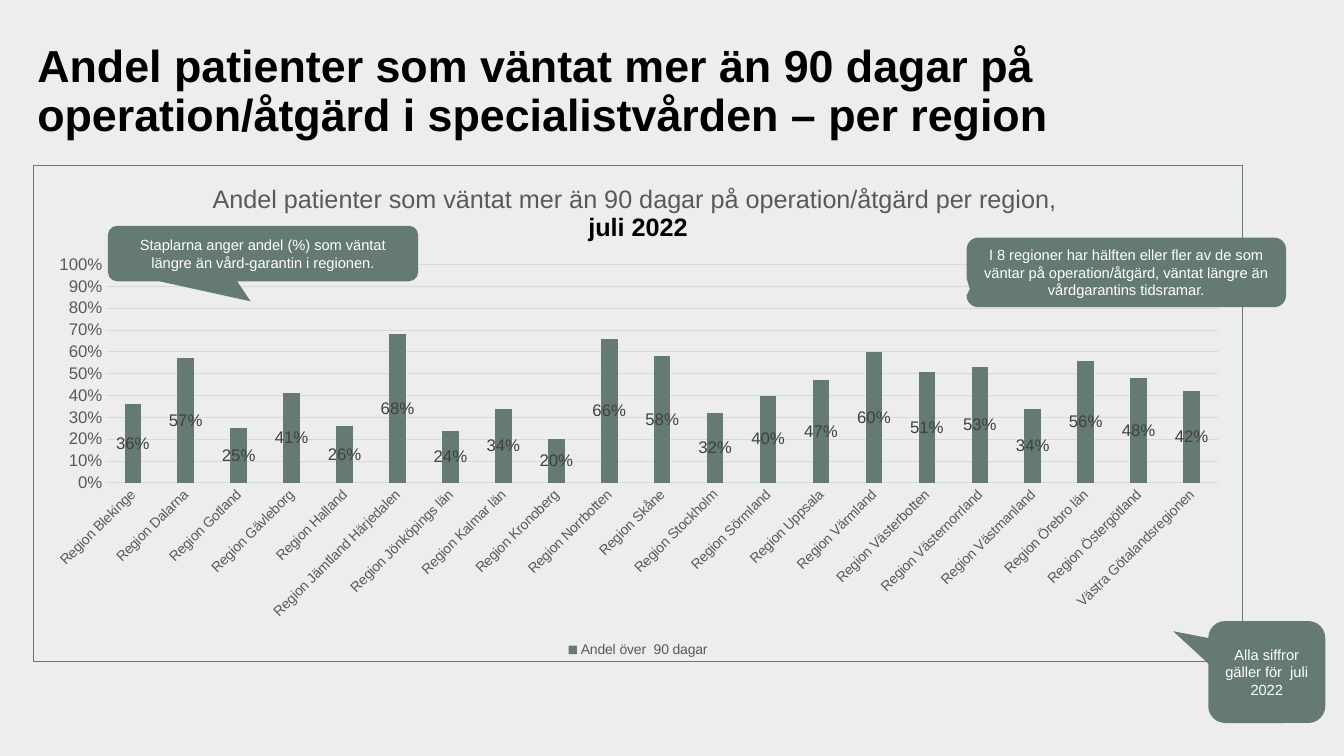
from lxml import etree
from pptx import Presentation
from pptx.chart.data import CategoryChartData
from pptx.dml.color import RGBColor
from pptx.enum import chart as kinds, shapes, text
from pptx.oxml import parse_xml
from pptx.oxml.ns import nsdecls, qn
from pptx.util import Cm, Pt

# Content
FONT = "Arial"
GREEN, GREY, PALE = "657B71", "595959", "D9D9D9"
HEADING = ("Andel patienter som väntat mer än 90 dagar på "
           "operation/åtgärd i specialistvården – per region")
CHART_TITLE = [
    ("Andel patienter som väntat mer än 90 dagar på operation/åtgärd per region, ", GREY, False),
    ("juli 2022", "000000", True),
]
SERIES = "Andel över  90 dagar"
SHARES = {
    "Region Blekinge": 0.36, "Region Dalarna": 0.57, "Region Gotland": 0.25,
    "Region Gävleborg": 0.41, "Region Halland": 0.26,
    "Region Jämtland Härjedalen": 0.68, "Region Jönköpings län": 0.24,
    "Region Kalmar län": 0.34, "Region Kronoberg": 0.2, "Region Norrbotten": 0.66,
    "Region Skåne": 0.58, "Region Stockholm": 0.32, "Region Sörmland": 0.4,
    "Region Uppsala": 0.47, "Region Värmland": 0.6, "Region Västerbotten": 0.51,
    "Region Västernorrland": 0.53, "Region Västmanland": 0.34,
    "Region Örebro län": 0.56, "Region Östergötland": 0.48,
    "Västra Götalandsregionen": 0.42,
}
# Callouts: text, (left, top, width, height) in cm, pointer tip
CALLOUTS = [
    ("Alla siffror gäller för  juli 2022",
     (30.45, 15.65, 2.95, 2.57), (-0.8, -0.4)),
    ("I 8 regioner har hälften eller fler av de som väntar på operation/åtgärd, "
     "väntat längre än vårdgarantins tidsramar.",
     (24.36, 5.99, 8.05, 1.75), (-0.49, 0.24)),
    ("Staplarna anger andel (%) som väntat längre än vård-garantin i regionen.",
     (2.72, 5.69, 7.82, 1.4), (-0.04, 0.86)),
]
PLOT = {"x": 0.06, "y": 0.2, "w": 0.92, "h": 0.44}  # fractions of the chart


def rgb(value):
    return RGBColor.from_string(value)


def style(font, size, color, bold=False):
    font.name, font.size, font.bold = FONT, Pt(size), bold
    font.color.rgb = rgb(color)


def draw_line(line, color):
    line.color.rgb = rgb(color)
    line.width = Pt(0.75)


deck = Presentation()
deck.slide_width, deck.slide_height = Cm(33.87), Cm(19.05)
page = deck.slides.add_slide(deck.slide_layouts[6])
page.background.fill.solid()
page.background.fill.fore_color.rgb = rgb("EDEDED")

# Chart
data = CategoryChartData(number_format="0%")
data.categories = list(SHARES)
data.add_series(SERIES, list(SHARES.values()))
chart = page.shapes.add_chart(kinds.XL_CHART_TYPE.COLUMN_CLUSTERED, Cm(0.84), Cm(4.15),
                              Cm(30.48), Cm(12.54), data).chart
style(chart.font, 12, "000000")

title_frame = chart.chart_title.text_frame
for number, (words, color, bold) in enumerate(CHART_TITLE):
    para = title_frame.add_paragraph() if number else title_frame.paragraphs[0]
    para.text = words
    style(para.font, 18, color, bold)

chart.has_legend = True
chart.legend.position = kinds.XL_LEGEND_POSITION.BOTTOM
chart.legend.include_in_layout = False
style(chart.legend.font, 10, GREY)

# Axes
regions, percent = chart.category_axis, chart.value_axis
for axis, size in ((regions, 10), (percent, 12)):
    axis.major_tick_mark = axis.minor_tick_mark = kinds.XL_TICK_MARK.NONE
    style(axis.tick_labels.font, size, GREY)
draw_line(regions.format.line, PALE)
label_body = regions._element.find(qn("c:txPr")).find(qn("a:bodyPr"))
label_body.set("rot", "-2700000")
label_body.set("vert", "horz")
percent.minimum_scale, percent.maximum_scale, percent.major_unit = 0, 1, 0.1
percent.tick_labels.number_format = "0%"
percent.tick_labels.number_format_is_linked = False
percent.format.line.fill.background()
draw_line(percent.major_gridlines.format.line, PALE)

# Columns and their labels
columns = chart.plots[0]
columns.gap_width, columns.overlap, columns.vary_by_categories = 219, -27, False
series = columns.series[0]
series.format.fill.solid()
series.format.fill.fore_color.rgb = rgb(GREEN)
labels = series.data_labels
labels.show_value = True
labels.number_format, labels.number_format_is_linked = "0%", False
labels.position = kinds.XL_LABEL_POSITION.CENTER
style(labels.font, 12, "404040")

# Plot position and chart border
plot_area = chart._chartSpace.chart.plotArea
for old_layout in plot_area.findall(qn("c:layout")):
    plot_area.remove(old_layout)
layout = etree.Element(qn("c:layout"))
manual = etree.SubElement(layout, qn("c:manualLayout"))
settings = [("layoutTarget", "inner"), ("xMode", "edge"), ("yMode", "edge"), *PLOT.items()]
for tag, value in settings:
    etree.SubElement(manual, qn("c:" + tag)).set("val", str(value))
plot_area.insert(0, layout)
chart._chartSpace.chart.addnext(parse_xml(
    f'<c:spPr {nsdecls("c", "a")}><a:noFill/><a:ln w="{Pt(0.75)}"><a:solidFill>'
    f'<a:srgbClr val="{GREEN}"/></a:solidFill></a:ln></c:spPr>'))

# Heading
box = page.shapes.add_textbox(Cm(0.94), Cm(0.48), Cm(27.66), Cm(3.07))
frame = box.text_frame
frame.word_wrap = True
frame.vertical_anchor = text.MSO_ANCHOR.BOTTOM
frame.margin_left = frame.margin_right = frame.margin_top = frame.margin_bottom = 0
para = frame.paragraphs[0]
para.text = HEADING
para.line_spacing = 0.9
style(para.font, 32, "000000", True)

# Callouts
for words, place, tip in CALLOUTS:
    callout = page.shapes.add_shape(shapes.MSO_SHAPE.ROUNDED_RECTANGULAR_CALLOUT,
                                    *map(Cm, place))
    callout.adjustments[0], callout.adjustments[1] = tip
    callout.shadow.inherit = False
    callout.fill.solid()
    callout.fill.fore_color.rgb = rgb(GREEN)
    callout.line.fill.background()
    frame = callout.text_frame
    frame.word_wrap = True
    frame.vertical_anchor = text.MSO_ANCHOR.MIDDLE
    para = frame.paragraphs[0]
    para.text = words
    para.alignment = text.PP_ALIGN.CENTER
    style(para.font, 10.5, "FFFFFF")

deck.save("out.pptx")
